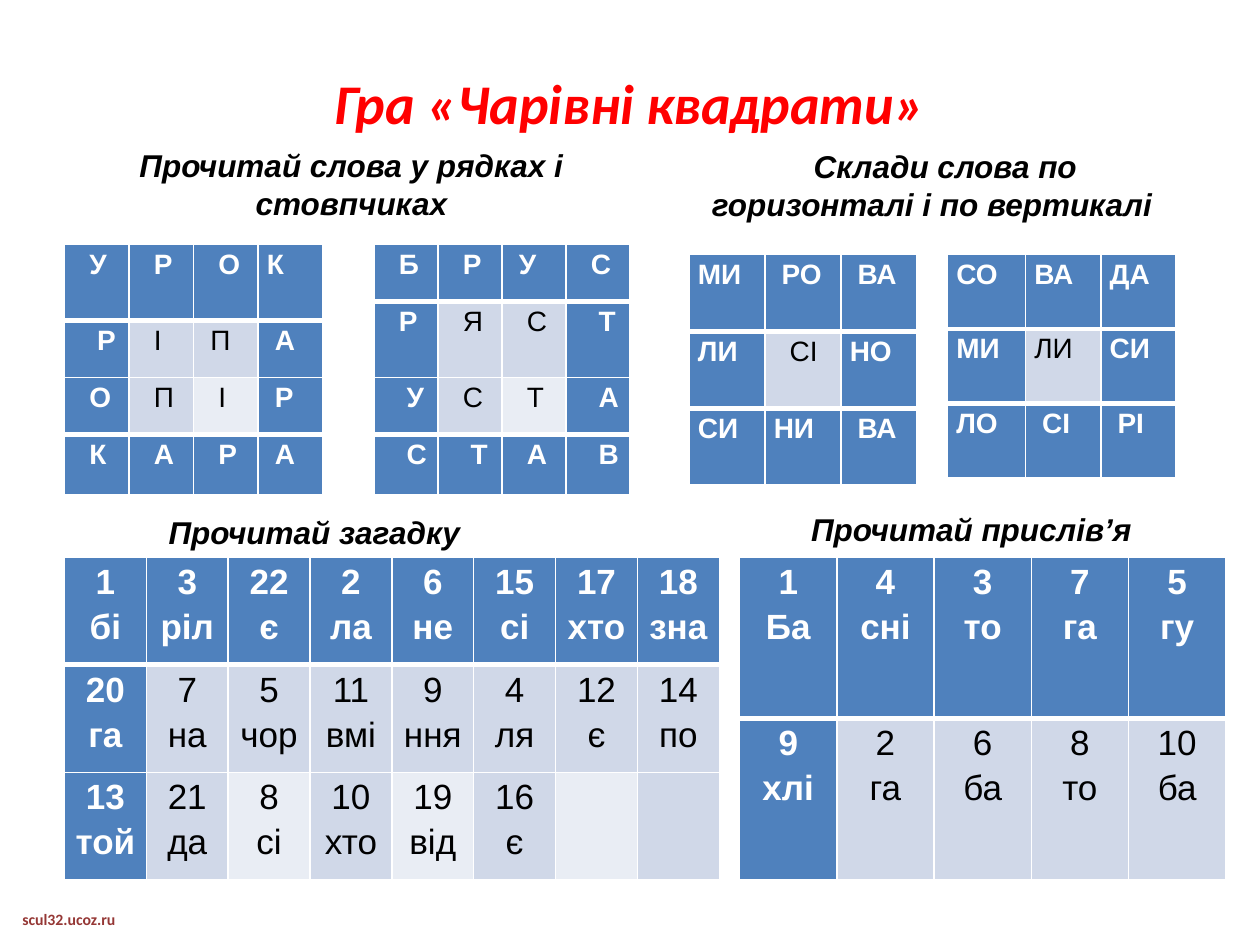
from lxml import etree
from pptx import Presentation
from pptx.dml.color import RGBColor
from pptx.enum.text import MSO_ANCHOR, PP_ALIGN
from pptx.oxml.ns import qn
from pptx.util import Cm, Pt

CENTER, LEFT = PP_ALIGN.CENTER, PP_ALIGN.LEFT
MIDDLE = MSO_ANCHOR.MIDDLE
COLORS = {
    "white": "FFFFFF", "black": "000000", "red": "FF0000", "footer": "953735",
    "blue": "4F81BD", "band": "D0D8E8", "light": "E9EDF4",
}
CELL_MARGIN = 0.18
INDENT_STEP = 0.16


def style_text(paragraph, size, color, font="Arial", bold=True, italic=False, align=LEFT):
    paragraph.alignment = align
    paragraph.font.name = font
    paragraph.font.size = Pt(size)
    paragraph.font.bold = bold
    paragraph.font.italic = italic
    paragraph.font.color.rgb = RGBColor.from_string(COLORS[color])


def add_border(cell, top, bottom):
    """Draw white cell edges, given the top and bottom widths in points."""
    properties = cell._tc.get_or_add_tcPr()
    edges = (("a:lnL", 1), ("a:lnR", 1), ("a:lnT", top), ("a:lnB", bottom))
    for position, (tag, width) in enumerate(edges):
        line = etree.Element(qn(tag), w=str(Pt(width)))
        fill = etree.SubElement(line, qn("a:solidFill"))
        etree.SubElement(fill, qn("a:srgbClr"), val=COLORS["white"])
        properties.insert(position, line)


presentation = Presentation()
presentation.slide_width, presentation.slide_height = Cm(25.4), Cm(19.05)
slide = presentation.slides.add_slide(presentation.slide_layouts[5])

title = slide.shapes.title
title.left, title.top, title.width, title.height = Cm(1.27), Cm(1.37), Cm(22.86), Cm(1.37)
title.text_frame.text = "Гра «Чарівні квадрати»"
title.text_frame.vertical_anchor = MIDDLE
style_text(title.text_frame.paragraphs[0], 32, "red", "Calibri", italic=True, align=CENTER)

# text, left, top, width, height, alignment, first-line indent
headings = [
    ("Прочитай слова у рядках і стовпчиках", 1.09, 2.82, 11.99, 1.8, CENTER, 0),
    ("Склади слова по горизонталі і по вертикалі", 13.89, 2.84, 9.8, 1.8, CENTER, 0.53),
    ("Прочитай загадку", 3.15, 10.21, 8.79, 1.02, LEFT, 0),
    ("Прочитай прислів’я", 16.1, 10.16, 8.2, 1.02, LEFT, 0),
]
for text, left, top, width, height, align, indent in headings:
    heading = slide.shapes.add_textbox(Cm(left), Cm(top), Cm(width), Cm(height))
    heading.text_frame.word_wrap = True
    heading.text_frame.text = text
    paragraph = heading.text_frame.paragraphs[0]
    if indent:
        paragraph._p.get_or_add_pPr().set("indent", str(Cm(indent)))
    style_text(paragraph, 18, "black", italic=True, align=align)

# Letter squares have a blue frame; indents are counted in steps, one digit a cell.
squares = [
    dict(left=1.3, top=4.93, columns=[1.3] * 4, rows=[1.53, 1.15, 1.15, 1.22],
         words=["У Р О К", "Р І П А", "О П І Р", "К А Р А"],
         indents=["2220", "3211", "2221", "2221"]),
    dict(left=7.54, top=4.93, columns=[1.29] * 4, rows=[1.15, 1.53, 1.15, 1.22],
         words=["Б Р У С", "Р Я С Т", "У С Т А", "С Т А В"],
         indents=["2212", "2223", "3223", "3323"]),
    dict(left=13.89, top=5.13, columns=[1.53] * 3, rows=[1.55] * 3,
         words=["МИ РО ВА", "ЛИ СІ НО", "СИ НИ ВА"],
         indents=["011", "020", "001"]),
    dict(left=19.1, top=5.13, columns=[1.57, 1.52, 1.52], rows=[1.5] * 3,
         words=["СО ВА ДА", "МИ ЛИ СИ", "ЛО СІ РІ"],
         indents=["000", "000", "011"]),
]
# Number grids hold a number above a syllable.
number_grids = [
    dict(left=1.3, top=11.23, columns=[1.65] * 8, rows=[2.17] * 3,
         words=["1:бі 3:ріл 22:є 2:ла 6:не 15:сі 17:хто 18:зна",
                "20:га 7:на 5:чор 11:вмі 9:ння 4:ля 12:є 14:по",
                "13:той 21:да 8:сі 10:хто 19:від 16:є"]),
    dict(left=14.91, top=11.23, columns=[1.96] * 5, rows=[3.25] * 2,
         words=["1:Ба 4:сні 3:то 7:га 5:гу", "9:хлі 2:га 6:ба 8:то 10:ба"]),
]
for grid in squares + number_grids:
    columns, rows = grid["columns"], grid["rows"]
    framed = "indents" in grid
    table = slide.shapes.add_table(
        len(rows), len(columns), Cm(grid["left"]), Cm(grid["top"]),
        Cm(sum(columns)), Cm(sum(rows))).table
    for column, width in zip(table.columns, columns):
        column.width = Cm(width)
    last_row, last_column = len(rows) - 1, len(columns) - 1
    for r, height in enumerate(rows):
        table.rows[r].height = Cm(height)
        words = grid["words"][r].split()
        for c in range(len(columns)):
            cell = table.cell(r, c)
            steps = int(grid["indents"][r][c]) if framed else 0
            cell.margin_left = Cm(CELL_MARGIN + INDENT_STEP * steps)
            cell.margin_right = Cm(CELL_MARGIN if not framed else 0)
            cell.margin_top = cell.margin_bottom = 0
            if c < len(words):
                cell.text = words[c].replace(":", "\n")

            on_edge = r == 0 or c == 0 or framed and (r == last_row or c == last_column)
            band = "light" if r % 2 == 0 and c % 2 == 0 else "band"
            cell.fill.solid()
            cell.fill.fore_color.rgb = RGBColor.from_string(COLORS["blue" if on_edge else band])
            top = 3 if r == 1 or framed and r == last_row else 1
            bottom = 3 if r == 0 or framed and r == last_row - 1 else 1
            add_border(cell, top, bottom)
            for paragraph in cell.text_frame.paragraphs:
                paragraph.line_spacing = 1.15
                style_text(paragraph, 16 if framed else 20, "white" if on_edge else "black",
                           bold=on_edge, align=LEFT if framed else CENTER)

footer = slide.shapes.add_textbox(Cm(0.2), Cm(18.21), Cm(5.56), Cm(0.64))
footer.text_frame.word_wrap = True
footer.text_frame.text = "scul32.ucoz.ru"
style_text(footer.text_frame.paragraphs[0], 9, "footer", "Calibri")

presentation.save("out.pptx")
